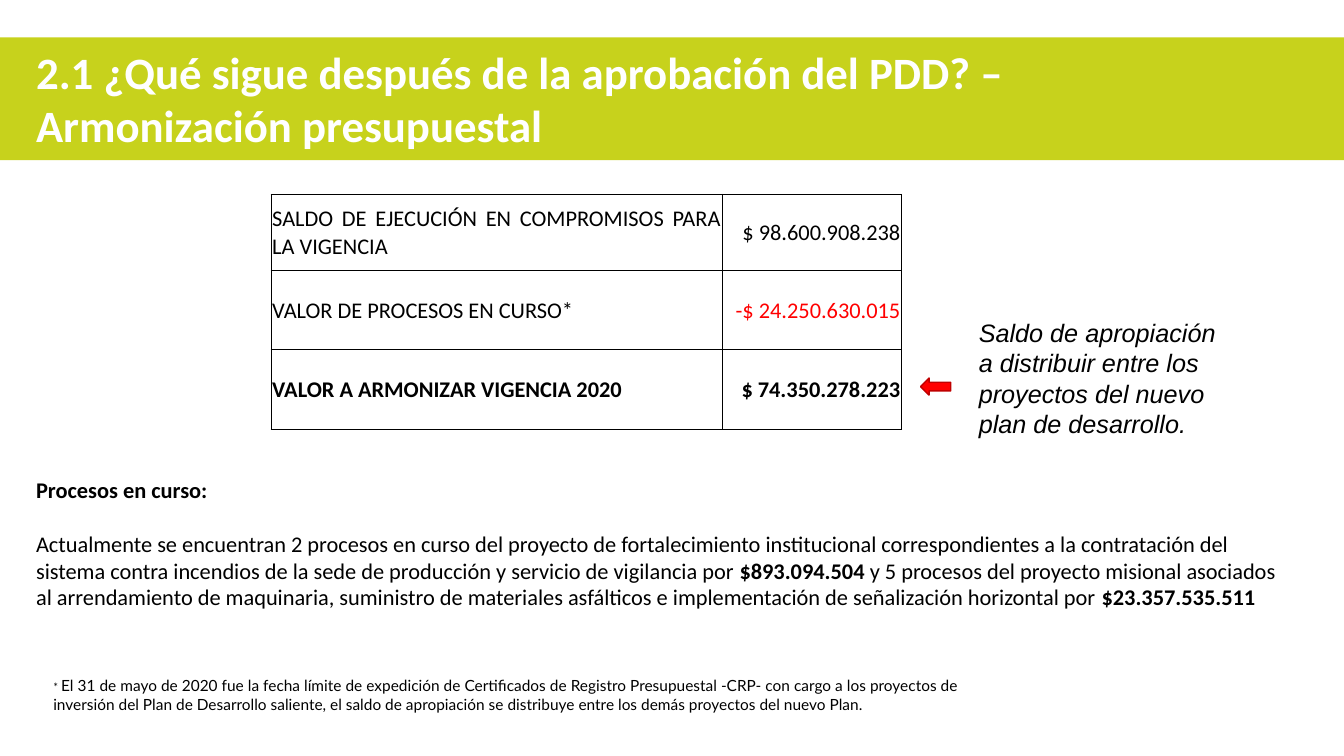
from dataclasses import dataclass

from lxml.etree import SubElement
from pptx import Presentation
from pptx.dml.color import RGBColor
from pptx.enum.shapes import MSO_SHAPE as Shape
from pptx.enum.text import MSO_ANCHOR as Anchor, PP_ALIGN as Align
from pptx.oxml.ns import qn
from pptx.slide import Slide
from pptx.table import _Cell as Cell
from pptx.util import Inches, Pt


@dataclass(frozen=True)
class Theme:
    lime: str = "C7D21C"
    white: str = "FFFFFF"
    black: str = "000000"
    red: str = "FF0000"
    dark_red: str = "C00000"
    heading_font: str = "Calibri"
    callout_font: str = "Arial"
    footnote_font: str = "Lato"
    title_size: float = 32
    callout_size: float = 18
    body_size: float = 16
    footnote_size: float = 11
    asterisk_size: float = 8
    heading_gap: float = 19.5
    outer_border: float = 1
    inner_border: float = 0.5


@dataclass(frozen=True)
class Box:
    left: float
    top: float
    width: float
    height: float

    def lengths(self) -> tuple:
        return tuple(Inches(n) for n in (self.left, self.top, self.width, self.height))


@dataclass(frozen=True)
class Style:
    font: str
    size: float
    color: str = "000000"
    bold: bool = False
    italic: bool = False


@dataclass(frozen=True)
class Span:
    text: str
    style: Style


@dataclass(frozen=True)
class TextBlock:
    box: Box
    paragraphs: list[list[Span]]
    align: Align = Align.LEFT
    gap: float = 0


@dataclass(frozen=True)
class BudgetRow:
    label: str
    amount: str
    height: float
    label_style: Style
    amount_style: Style


THEME = Theme()
TITLE = Style(THEME.heading_font, THEME.title_size, THEME.white, bold=True)
CALLOUT = Style(THEME.callout_font, THEME.callout_size, italic=True)
BODY = Style(THEME.heading_font, THEME.body_size)
STRONG = Style(THEME.heading_font, THEME.body_size, bold=True)
NEGATIVE = Style(THEME.heading_font, THEME.body_size, THEME.red)
FOOTNOTE = Style(THEME.footnote_font, THEME.footnote_size)
ASTERISK = Style(THEME.footnote_font, THEME.asterisk_size)

TEXT_BLOCKS = [
    TextBlock(Box(0.26, 0.39, 12.26, 1.18), [[
        Span("2.1 ¿Qué sigue después de la aprobación del PDD? – Armonización presupuestal", TITLE),
    ]]),
    TextBlock(Box(9.61, 3.1, 2.74, 1.31), [[
        Span("Saldo de apropiación a distribuir entre los proyectos del nuevo plan de desarrollo.", CALLOUT),
    ]]),
    TextBlock(Box(0.43, 6.66, 9.18, 0.47), [[
        Span("* ", ASTERISK),
        Span("El 31 de mayo de 2020 fue la fecha límite de expedición de Certificados de Registro "
             "Presupuestal -CRP- con cargo a los proyectos de inversión del Plan de Desarrollo saliente, "
             "el saldo de apropiación se distribuye entre los demás proyectos del nuevo Plan.", FOOTNOTE),
    ]], align=Align.JUSTIFY),
    TextBlock(Box(0.26, 4.67, 12.56, 1.45), [
        [Span("Procesos en curso:", STRONG)],
        [
            Span("Actualmente se encuentran 2 procesos en curso del proyecto de fortalecimiento "
                 "institucional correspondientes a la contratación del sistema contra incendios de la "
                 "sede de producción y servicio de vigilancia por", BODY),
            Span(" $893.094.504 ", STRONG),
            Span("y 5 procesos del proyecto misional asociados al arrendamiento de maquinaria, "
                 "suministro de materiales asfálticos e implementación de señalización horizontal por ", BODY),
            Span("$23.357.535.511", STRONG),
        ],
    ], gap=THEME.heading_gap),
]

TABLE_BOX = Box(2.69, 1.93, 6.25, 2.33)
COLUMN_WIDTHS = [4.47, 1.78]
BUDGET_ROWS = [
    BudgetRow("SALDO DE EJECUCIÓN EN COMPROMISOS PARA LA VIGENCIA", "$ 98.600.908.238", 0.75, BODY, BODY),
    BudgetRow("VALOR DE PROCESOS EN CURSO*", "-$ 24.250.630.015", 0.79, BODY, NEGATIVE),
    BudgetRow("VALOR A ARMONIZAR VIGENCIA 2020", "$ 74.350.278.223", 0.79, STRONG, STRONG),
]
COLUMN_BORDERS = [THEME.outer_border, THEME.inner_border, THEME.outer_border]
ROW_BORDERS = [THEME.outer_border, THEME.inner_border, THEME.outer_border, THEME.outer_border]


def apply_style(run, style: Style) -> None:
    run.font.name = style.font
    run.font.size = Pt(style.size)
    run.font.bold = style.bold
    run.font.italic = style.italic
    run.font.color.rgb = RGBColor.from_string(style.color)


def draw_text(slide: Slide, block: TextBlock) -> None:
    text_frame = slide.shapes.add_textbox(*block.box.lengths()).text_frame
    text_frame.word_wrap = True
    for index, spans in enumerate(block.paragraphs):
        paragraph = text_frame.add_paragraph() if index else text_frame.paragraphs[0]
        paragraph.alignment = block.align
        if index:
            paragraph.space_before = Pt(block.gap)
        for span in spans:
            run = paragraph.add_run()
            run.text = span.text
            apply_style(run, span.style)


def draw_shape(slide: Slide, kind: Shape, box: Box, fill: str, line: str | None = None) -> None:
    shape = slide.shapes.add_shape(kind, *box.lengths())
    shape.shadow.inherit = False
    shape.fill.solid()
    shape.fill.fore_color.rgb = RGBColor.from_string(fill)
    if line:
        shape.line.color.rgb = RGBColor.from_string(line)
        shape.line.width = Pt(1)
    else:
        shape.line.fill.background()


def set_borders(cell: Cell, widths: dict[str, float]) -> None:
    properties = cell._tc.get_or_add_tcPr()
    for side, width in widths.items():
        line = SubElement(properties, qn(f"a:ln{side}"), w=str(Pt(width)))
        fill = SubElement(line, qn("a:solidFill"))
        SubElement(fill, qn("a:srgbClr"), val=THEME.black)


def fill_cell(cell: Cell, text: str, style: Style, align: Align) -> None:
    cell.fill.background()
    cell.vertical_anchor = Anchor.MIDDLE
    cell.margin_left = cell.margin_right = cell.margin_top = Inches(0.01)
    cell.margin_bottom = Inches(0)
    cell.text_frame.text = text
    paragraph = cell.text_frame.paragraphs[0]
    paragraph.alignment = align
    apply_style(paragraph.runs[0], style)


def draw_budget_table(slide: Slide) -> None:
    size = len(BUDGET_ROWS), len(COLUMN_WIDTHS)
    table = slide.shapes.add_table(*size, *TABLE_BOX.lengths()).table
    table.first_row = table.horz_banding = False
    for column, width in zip(table.columns, COLUMN_WIDTHS):
        column.width = Inches(width)
    for r, row in enumerate(BUDGET_ROWS):
        table.rows[r].height = Inches(row.height)
        contents = [
            (row.label, row.label_style, Align.JUSTIFY),
            (row.amount, row.amount_style, Align.RIGHT),
        ]
        for c, content in enumerate(contents):
            cell = table.cell(r, c)
            set_borders(cell, {"L": COLUMN_BORDERS[c], "R": COLUMN_BORDERS[c + 1],
                               "T": ROW_BORDERS[r], "B": ROW_BORDERS[r + 1]})
            fill_cell(cell, *content)


def main() -> None:
    presentation = Presentation()
    presentation.slide_width = Inches(13.33)
    presentation.slide_height = Inches(7.5)
    slide = presentation.slides.add_slide(presentation.slide_layouts[6])
    draw_shape(slide, Shape.RECTANGLE, Box(0, 0.37, 13.33, 1.22), THEME.lime)
    draw_shape(slide, Shape.LEFT_ARROW, Box(9.13, 3.75, 0.3, 0.17), THEME.red, THEME.dark_red)
    draw_budget_table(slide)
    for block in TEXT_BLOCKS:
        draw_text(slide, block)
    presentation.save("out.pptx")


if __name__ == "__main__":
    main()
